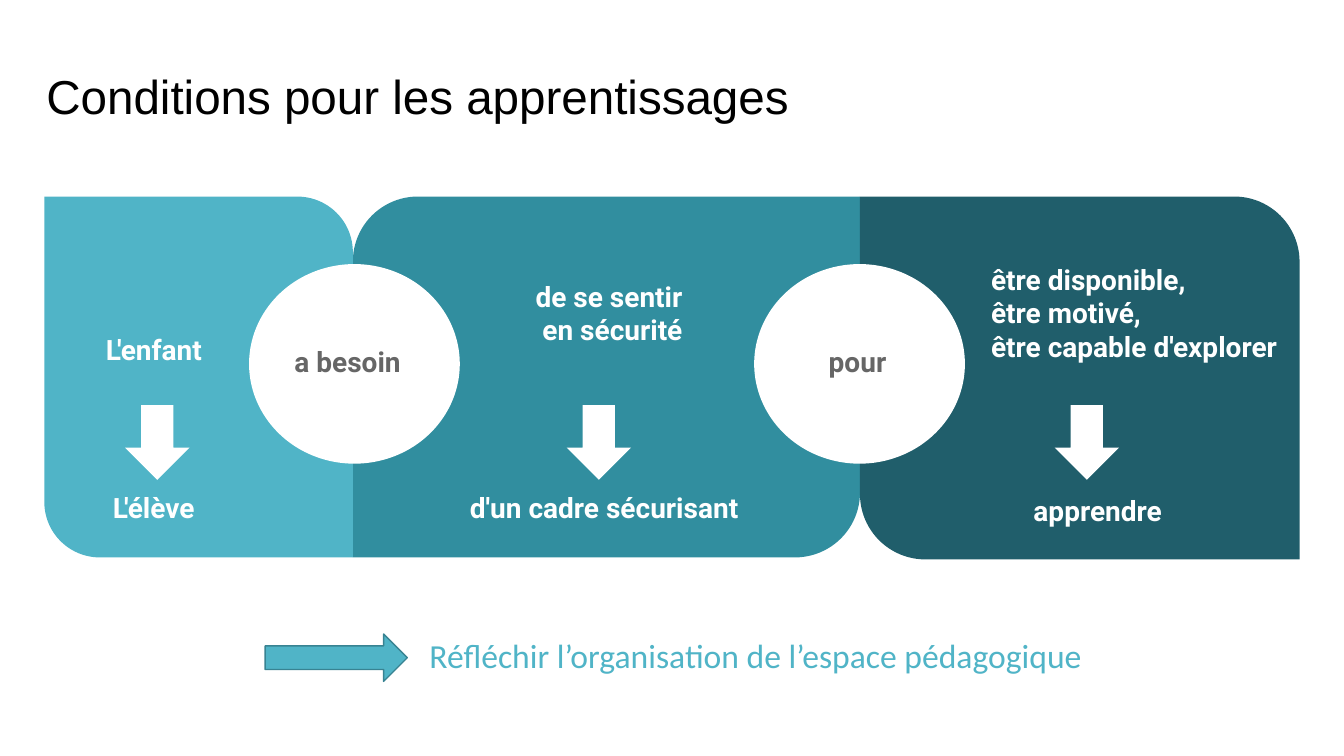
from dataclasses import dataclass

from pptx import Presentation
from pptx import util as u
from pptx.dml import color
from pptx.enum import shapes, text


@dataclass(frozen=True)
class Theme:
    light: str = "50B4C7"
    medium: str = "318E9F"
    dark: str = "205E6B"
    outline: str = "388392"
    white: str = "FFFFFF"
    grey: str = "666666"
    black: str = "000000"
    title_font: str = "Arial"
    label_font: str = "Roboto"
    note_font: str = "Calibri"
    title_size: int = 34
    label_size: int = 20
    note_size: int = 24


@dataclass(frozen=True)
class Box:
    left: float
    top: float
    width: float
    height: float


@dataclass(frozen=True)
class Panel:
    box: Box
    fill: str
    corners: tuple[float, float]


@dataclass(frozen=True)
class Label:
    content: str
    box: Box
    colour: str = Theme.white
    align: text.PP_ALIGN = text.PP_ALIGN.LEFT


THEME = Theme()
KIND = shapes.MSO_SHAPE

PANELS = [
    Panel(Box(3.5, 1.95, 5.03, 3.58), THEME.medium, (0.18, 0)),
    Panel(Box(0.44, 1.95, 3.06, 3.58), THEME.light, (0, 0.18)),
    Panel(Box(8.53, 1.95, 4.36, 3.6), THEME.dark, (0, 0.18)),
]
CIRCLE_LEFTS = (2.47, 7.48)
DOWN_ARROW_LEFTS = (1.24, 5.62, 10.46)
LABELS = [
    Label("L'enfant", Box(1.04, 3.29, 1.03, 0.36)),
    Label("L'élève", Box(1.11, 4.86, 0.89, 0.36)),
    Label("a besoin", Box(2.91, 3.41, 1.08, 0.36), THEME.grey),
    Label("de se sentir en sécurité", Box(5.28, 2.76, 1.49, 0.69),
          align=text.PP_ALIGN.RIGHT),
    Label("d'un cadre sécurisant", Box(4.65, 4.86, 2.69, 0.35)),
    Label("pour", Box(8.21, 3.41, 0.6, 0.35), THEME.grey),
    Label("être disponible,\nêtre motivé,\nêtre capable d'explorer",
          Box(9.82, 2.59, 2.87, 1.02)),
    Label("apprendre", Box(10.24, 4.89, 1.31, 0.35)),
]


def place(shape, box: Box) -> None:
    shape.left, shape.top = u.Inches(box.left), u.Inches(box.top)
    shape.width, shape.height = u.Inches(box.width), u.Inches(box.height)


def write_text(shape, content: str, *, font: str, size: int, colour: str,
               bold: bool = False,
               align: text.PP_ALIGN = text.PP_ALIGN.LEFT) -> None:
    frame = shape.text_frame
    frame.text = content
    frame.word_wrap = True
    frame.auto_size = text.MSO_AUTO_SIZE.NONE
    frame.vertical_anchor = text.MSO_ANCHOR.TOP
    frame.margin_left = frame.margin_top = u.Inches(0.01)
    frame.margin_right = frame.margin_bottom = 0
    for paragraph in frame.paragraphs:
        paragraph.alignment = align
        paragraph.font.name = font
        paragraph.font.size = u.Pt(size)
        paragraph.font.bold = bold
        paragraph.font.color.rgb = color.RGBColor.from_string(colour)


def add_textbox(slide, box: Box):
    return slide.shapes.add_textbox(u.Inches(box.left), u.Inches(box.top),
                                    u.Inches(box.width), u.Inches(box.height))


def add_figure(slide, kind: KIND, box: Box, fill: str,
               line: str | None = None):
    shape = slide.shapes.add_shape(
        kind, u.Inches(box.left), u.Inches(box.top),
        u.Inches(box.width), u.Inches(box.height))
    shape.shadow.inherit = False
    shape.fill.solid()
    shape.fill.fore_color.rgb = color.RGBColor.from_string(fill)
    if line:
        shape.line.color.rgb = color.RGBColor.from_string(line)
        shape.line.width = u.Pt(1)
    else:
        shape.line.fill.background()
    return shape


def add_panel(slide, panel: Panel) -> None:
    shape = add_figure(slide, KIND.ROUND_2_DIAG_RECTANGLE, panel.box, panel.fill)
    for index, radius in enumerate(panel.corners):
        shape.adjustments[index] = radius


def add_label(slide, label: Label) -> None:
    write_text(add_textbox(slide, label.box), label.content,
               font=THEME.label_font, size=THEME.label_size,
               colour=label.colour, bold=True, align=label.align)


def main() -> None:
    presentation = Presentation()
    presentation.slide_width = u.Inches(13.33)
    presentation.slide_height = u.Inches(7.5)
    slide = presentation.slides.add_slide(presentation.slide_layouts[5])

    title = slide.shapes.title
    place(title, Box(0.45, 0.65, 12.42, 0.59))
    write_text(title, "Conditions pour les apprentissages",
               font=THEME.title_font, size=THEME.title_size,
               colour=THEME.black)

    for panel in PANELS:
        add_panel(slide, panel)
    for left in CIRCLE_LEFTS:
        add_figure(slide, KIND.OVAL, Box(left, 2.62, 2.09, 1.98), THEME.white)
    for left in DOWN_ARROW_LEFTS:
        add_figure(slide, KIND.DOWN_ARROW, Box(left, 4.02, 0.64, 0.74),
                   THEME.white)
    for label in LABELS:
        add_label(slide, label)

    add_figure(slide, KIND.RIGHT_ARROW, Box(2.63, 6.29, 1.41, 0.47),
               THEME.light, THEME.outline)
    write_text(add_textbox(slide, Box(4.25, 6.29, 8.63, 0.42)),
               "Réfléchir l’organisation de l’espace pédagogique",
               font=THEME.note_font, size=THEME.note_size, colour=THEME.light)

    presentation.save("out.pptx")


if __name__ == "__main__":
    main()
